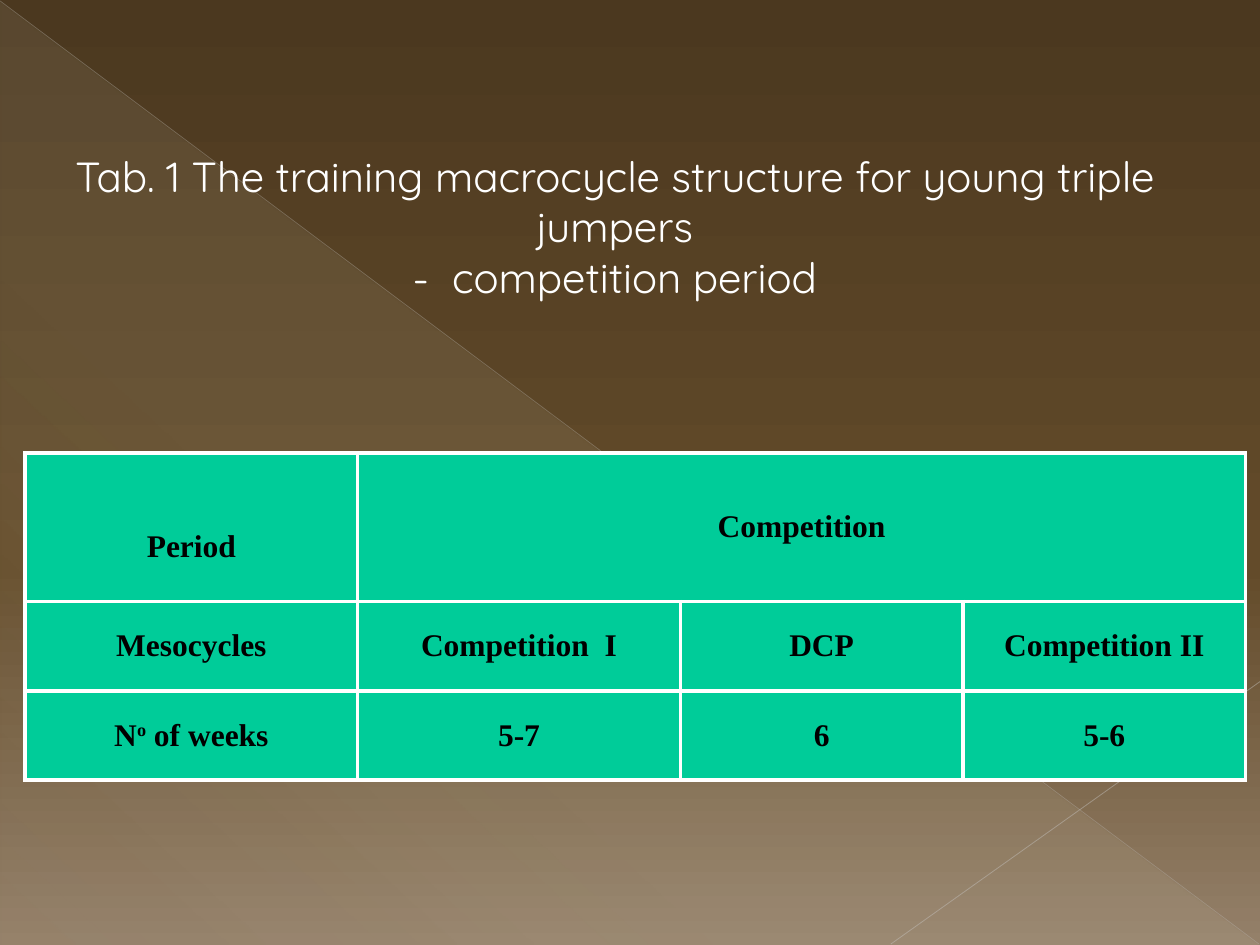
from lxml.etree import SubElement
from pptx import Presentation
from pptx.dml.color import RGBColor as RGB
from pptx.enum.shapes import MSO_CONNECTOR as Connector, MSO_SHAPE as Shape
from pptx.enum.text import MSO_ANCHOR as Anchor, PP_ALIGN as Align
from pptx.oxml.ns import qn
from pptx.util import Pt

WHITE = RGB(0xFF, 0xFF, 0xFF)
BLACK = RGB(0, 0, 0)
GREEN = RGB(0x00, 0xCC, 0x99)
DARK_BROWN = RGB(0x4B, 0x38, 0x1F)
BROWN = RGB(0x63, 0x4B, 0x2A)
TAUPE = RGB(0x94, 0x80, 0x69)
CREAM = RGB(0xEC, 0xED, 0xD1)
GREY = RGB(0xBE, 0xBA, 0xB5)
LIGHT_GREY = RGB(0xC5, 0xC2, 0xBE)

SUPERSCRIPT = "30000"
COLUMN_WIDTHS = (190, 184.4, 161.5, 161.5)
ROW_HEIGHTS = (85, 51, 51)
ROWS = (
    ("Period", "Competition"),
    ("Mesocycles", "Competition  I", "DCP", "Competition II"),
    (("N", "o", " of weeks"), "5-7", "6", "5-6"),
)


def add_colour(parent, colour, opacity=100):
    node = SubElement(parent, qn("a:srgbClr"), val=str(colour))
    if opacity < 100:
        SubElement(node, qn("a:alpha"), val=str(opacity * 1000))


def paint_gradient(fill, owner, stops, angle):
    """Fill with (position, colour, opacity) stops; angle is clockwise degrees."""
    fill.gradient()
    gradient = owner.find(".//" + qn("a:gradFill"))
    stop_list = gradient.find(qn("a:gsLst"))
    for old_stop in list(stop_list):
        stop_list.remove(old_stop)
    for position, colour, opacity in stops:
        stop = SubElement(stop_list, qn("a:gs"), pos=str(position * 1000))
        add_colour(stop, colour, opacity)
    gradient.find(qn("a:lin")).set("ang", str(angle * 60000))


def add_triangle(slide):
    triangle = slide.shapes.add_shape(
        Shape.RIGHT_TRIANGLE, Pt(0.5), Pt(1.2), Pt(719), Pt(538.8))
    triangle.shadow.inherit = False
    triangle.line.fill.background()
    stops = ((0, CREAM, 10), (70, CREAM, 8), (100, CREAM, 1))
    paint_gradient(triangle.fill, triangle.element, stops, 133)


def add_line(slide, start, end, colour, width, opacity):
    line = slide.shapes.add_connector(
        Connector.STRAIGHT, *(Pt(value) for value in start + end))
    line.line.width = Pt(width)
    line.line.color.rgb = colour
    properties = line.element.spPr
    SubElement(properties.find(".//" + qn("a:srgbClr")), qn("a:alpha"),
               val=str(opacity * 1000))
    SubElement(properties, qn("a:effectLst"))


def write(paragraph, text, *, font, size, colour, bold=False, raised=False):
    paragraph.alignment = Align.CENTER
    run = paragraph.add_run()
    run.text = text
    run.font.name = font
    run.font.size = Pt(size)
    run.font.bold = bold
    run.font.color.rgb = colour
    if raised:
        run.font._element.set("baseline", SUPERSCRIPT)


def set_title(slide):
    title = slide.shapes.title
    title.left, title.top, title.width, title.height = map(Pt, (33.8, 81.4, 635, 123.8))
    frame = title.text_frame
    frame.word_wrap = True
    frame.vertical_anchor = Anchor.MIDDLE
    frame.margin_bottom = Pt(32)
    lines = ("Tab. 1 The training macrocycle structure for young triple jumpers",
             "-  competition period")
    for index, text in enumerate(lines):
        paragraph = frame.add_paragraph() if index else frame.paragraphs[0]
        write(paragraph, text, font="Quicksand", size=24, colour=WHITE)
    slide.shapes.element.append(title.element)  # in front of the decoration


def format_cell(cell):
    cell.vertical_anchor = Anchor.MIDDLE
    properties = cell._tc.get_or_add_tcPr()
    for side in ("lnL", "lnR", "lnT", "lnB"):
        border = SubElement(properties, qn("a:" + side), w=str(Pt(2.25)))
        add_colour(SubElement(border, qn("a:solidFill")), WHITE)
    cell.fill.solid()
    cell.fill.fore_color.rgb = GREEN


def add_macrocycle_table(slide):
    table = slide.shapes.add_table(
        len(ROWS), len(COLUMN_WIDTHS), Pt(14.4), Pt(258.8),
        Pt(sum(COLUMN_WIDTHS)), Pt(sum(ROW_HEIGHTS))).table
    for column, width in zip(table.columns, COLUMN_WIDTHS):
        column.width = Pt(width)
    for row, height in zip(table.rows, ROW_HEIGHTS):
        row.height = Pt(height)
    for cell in table.iter_cells():
        format_cell(cell)
    table.cell(0, 1).merge(table.cell(0, 3))
    table.cell(0, 0).margin_top = Pt(26)  # "Period" sits below the middle
    for row_index, row in enumerate(ROWS):
        for column_index, content in enumerate(row):
            paragraph = table.cell(row_index, column_index).text_frame.paragraphs[0]
            parts = (content,) if isinstance(content, str) else content
            for part in parts:
                write(paragraph, part, font="Times New Roman", size=18,
                      colour=BLACK, bold=True, raised=part == "o")


def main():
    deck = Presentation()
    deck.slide_width, deck.slide_height = Pt(720), Pt(540)
    slide = deck.slides.add_slide(deck.slide_layouts[5])
    stops = ((0, DARK_BROWN, 100), (60, BROWN, 100), (100, TAUPE, 100))
    paint_gradient(slide.background.fill, slide.element, stops, 90)
    add_triangle(slide)
    add_line(slide, (0, 0.5), (719.5, 539.5), GREY, 0.39, 35)
    add_line(slide, (720, 389.5), (509, 539.5), LIGHT_GREY, 0.47, 45)
    set_title(slide)
    add_macrocycle_table(slide)
    deck.save("out.pptx")


if __name__ == "__main__":
    main()
